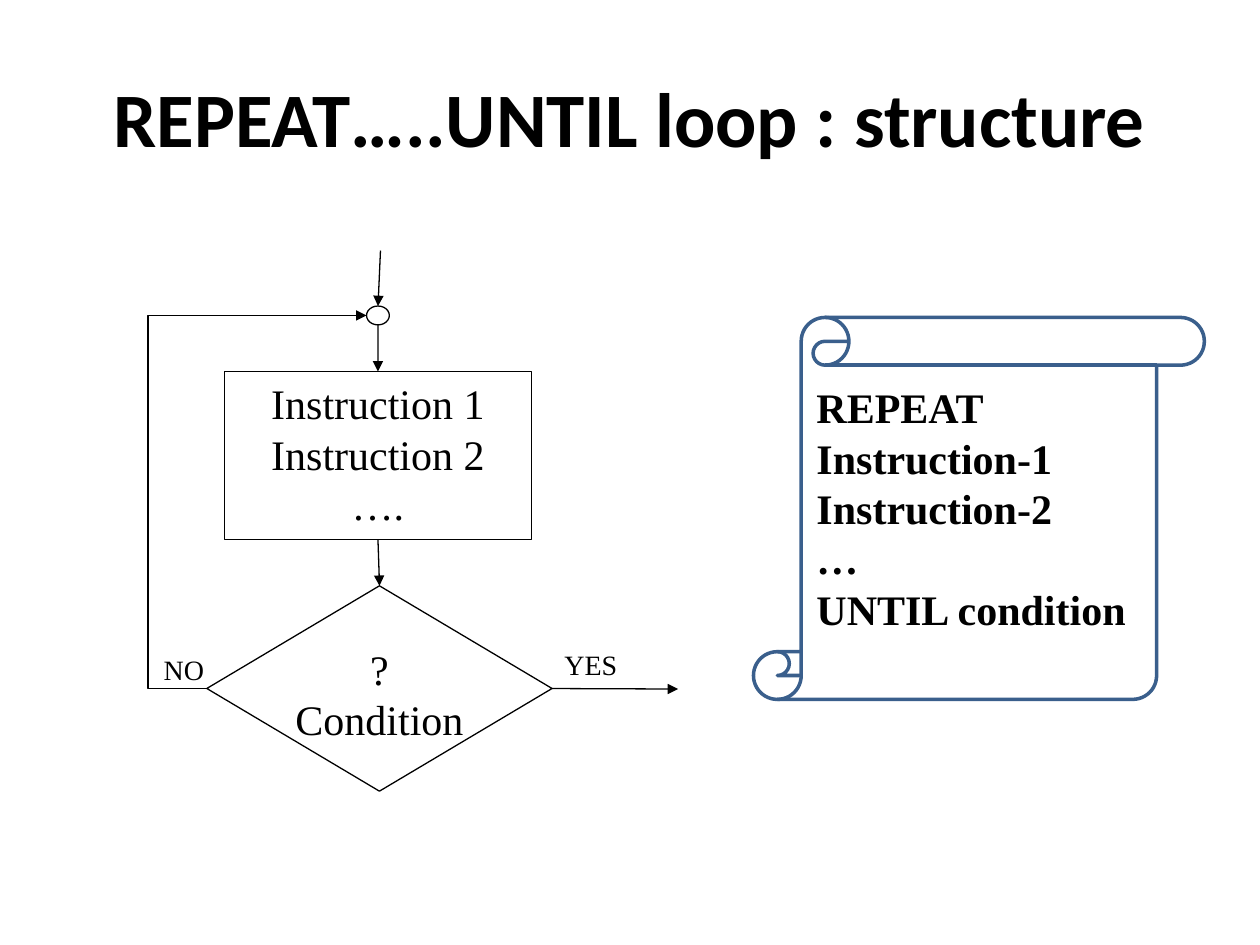
from lxml import etree
from pptx import Presentation
from pptx import util as u
from pptx.dml.color import RGBColor
from pptx.enum import shapes, text
from pptx.oxml.ns import qn

COLORS = {"ink": "000000", "paper": "FFFFFF", "scroll": "3A5F8C"}
SERIF = "Times New Roman"
KIND = shapes.MSO_SHAPE
LEFT, CENTER = text.PP_ALIGN.LEFT, text.PP_ALIGN.CENTER

TITLE = "REPEAT…..UNTIL loop : structure"
PSEUDOCODE = ["REPEAT", "Instruction-1", "Instruction-2", "…", "UNTIL condition"]
LABELS = [("NO", (3.05, 13.03, 2.26, 1.32)), ("YES", (11.13, 12.93, 2.26, 1.32))]
NODES = {
    "decision": (KIND.FLOWCHART_DECISION, (4.17, 11.81, 6.96, 4.14), ["?", "Condition"]),
    "process": (KIND.FLOWCHART_PROCESS, (4.52, 7.49, 6.2, 3.38),
                ["Instruction 1", "Instruction 2", "…."]),
    "junction": (KIND.FLOWCHART_CONNECTOR, (7.39, 6.17, 0.46, 0.38), []),
}
ARROWS = [
    ((7.67, 5.05), (7.62, 6.17)),
    ((7.62, 6.55), ("process", 0)),
    (("process", 2), ("decision", 0)),
    (("decision", 3), (13.67, 13.89)),
]
LOOP_BACK = ((4.17, 13.88), (7.39, 6.36))
LOOP_BEND = -36800


def color(name):
    return RGBColor.from_string(COLORS[name])


def write(box, lines, size, align=LEFT, bold=False, font=SERIF):
    frame = box.text_frame
    frame.word_wrap = True
    frame.vertical_anchor = text.MSO_ANCHOR.TOP
    frame.text = "\n".join(lines)
    for para in frame.paragraphs:
        para.alignment = align
        para.font.name = font
        para.font.size = u.Pt(size)
        para.font.bold = bold
        para.font.color.rgb = color("ink")


def add_box(page, kind, place, fill="paper", line="ink", width=0.75):
    box = page.shapes.add_shape(kind, *map(u.Cm, place))
    box.shadow.inherit = False
    if fill:
        box.fill.solid()
        box.fill.fore_color.rgb = color(fill)
    else:
        box.fill.background()
    if line:
        box.line.color.rgb = color(line)
        box.line.width = u.Pt(width)
    else:
        box.line.fill.background()
    return box


def add_arrow(page, nodes, start, end, kind=shapes.MSO_CONNECTOR.STRAIGHT):
    def point(place):
        return (0, 0) if place[0] in nodes else tuple(map(u.Cm, place))

    arrow = page.shapes.add_connector(kind, *point(start), *point(end))
    for place, join in ((start, arrow.begin_connect), (end, arrow.end_connect)):
        if place[0] in nodes:
            join(nodes[place[0]], place[1])
    arrow.line.color.rgb = color("ink")
    arrow.line.width = u.Pt(0.75)
    etree.SubElement(arrow.line._get_or_add_ln(), qn("a:tailEnd"), type="triangle")
    etree.SubElement(arrow._element.spPr, qn("a:effectLst"))
    return arrow


def main():
    """Build the slide on the REPEAT…UNTIL loop."""
    deck = Presentation()
    deck.slide_width, deck.slide_height = u.Cm(25.4), u.Cm(19.05)
    page = deck.slides.add_slide(deck.slide_layouts[5])

    title = page.shapes.title
    title.left, title.top, title.width, title.height = map(u.Cm, (0, 0.76, 25.4, 3.18))
    write(title, [TITLE], 44, CENTER, True, "Calibri")
    title.text_frame.vertical_anchor = text.MSO_ANCHOR.MIDDLE

    add_box(page, KIND.VERTICAL_SCROLL, (15.19, 6.4, 9.09, 7.7), None, "scroll", 2)
    code = page.shapes.add_textbox(*map(u.Cm, (16.21, 7.57, 7.29, 5.38)))
    write(code, PSEUDOCODE, 24, bold=True)

    for label, place in LABELS:
        write(add_box(page, KIND.RECTANGLE, place, line=None), [label], 16)

    nodes = {}
    for name, (kind, place, lines) in NODES.items():
        nodes[name] = add_box(page, kind, place)
        if lines:
            write(nodes[name], lines, 24, CENTER)
    frame = nodes["decision"].text_frame
    frame.margin_left = frame.margin_right = 0

    for start, end in ARROWS:
        add_arrow(page, nodes, start, end)
    loop = add_arrow(page, nodes, *LOOP_BACK, shapes.MSO_CONNECTOR.ELBOW)
    guides = loop._element.spPr.find(qn("a:prstGeom")).get_or_add_avLst()
    etree.SubElement(guides, qn("a:gd"), name="adj1", fmla=f"val {LOOP_BEND}")

    deck.save("out.pptx")


if __name__ == "__main__":
    main()
